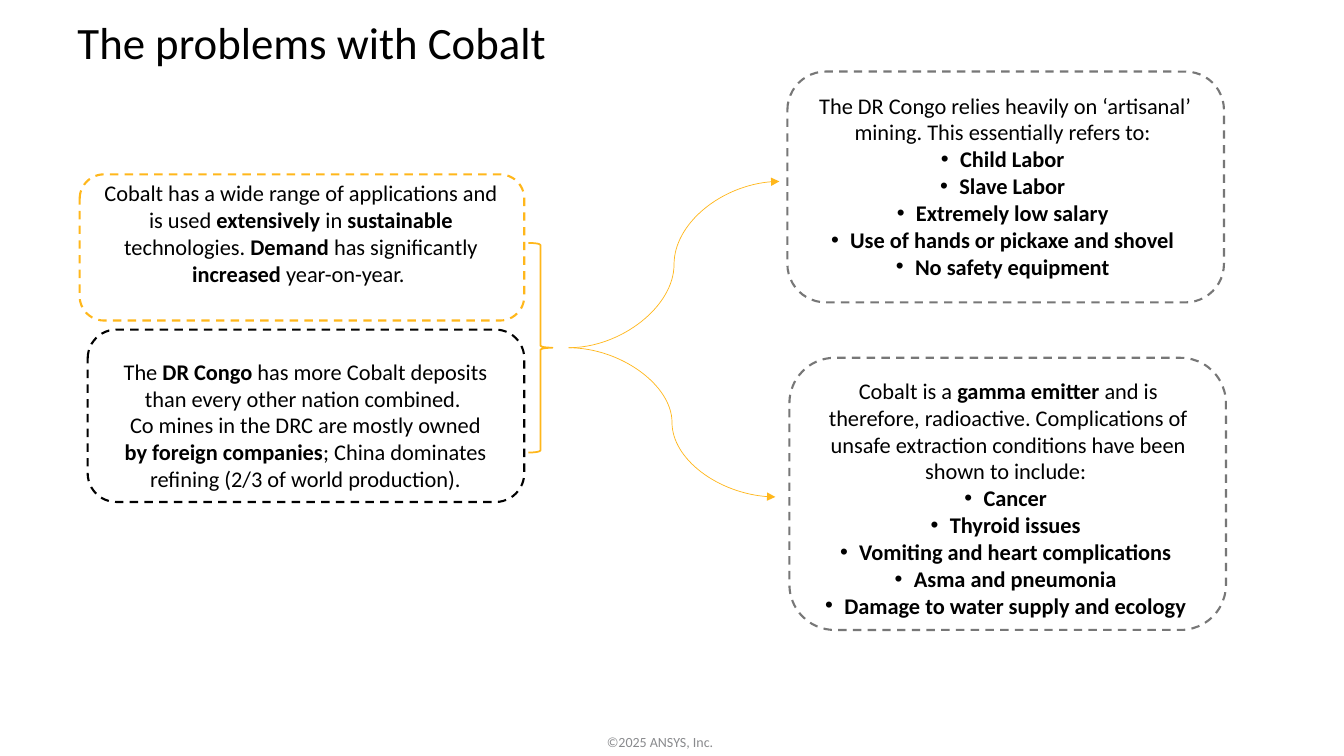
from lxml import etree
from pptx import Presentation
from pptx.dml.color import RGBColor
from pptx.enum import dml, shapes, text
from pptx.oxml import ns
from pptx.util import Inches, Pt

BLACK, WHITE, GREY, AMBER = "000000", "FFFFFF", "777777", "FFB71B"


def color(value):
    return RGBColor.from_string(value)


def write(paragraph, content, size=16, ink=BLACK, font="Calibri", align=None, bullet=False, spacing=None):
    if bullet:
        props = paragraph._p.get_or_add_pPr()
        props.set("marL", str(Inches(0.19)))
        props.set("indent", str(-Inches(0.19)))
        etree.SubElement(props, ns.qn("a:buFont")).set("typeface", "Arial")
        etree.SubElement(props, ns.qn("a:buChar")).set("char", "•")
    paragraph.alignment = align
    paragraph.line_spacing = spacing
    for index, part in enumerate(content.split("**")):
        if part:
            run = paragraph.add_run()
            run.text = part
            run.font.name = font
            run.font.size = Pt(size)
            run.font.bold = index % 2 == 1
            run.font.color.rgb = color(ink)


class CobaltSlide:
    def __init__(self, deck):
        self.shapes = deck.slides.add_slide(deck.slide_layouts[6]).shapes

    def label(self, place, paragraphs, bullets=(), **style):
        frame = self.shapes.add_textbox(*map(Inches, place)).text_frame
        frame.word_wrap = True
        frame.vertical_anchor = text.MSO_ANCHOR.TOP
        lines = [(line, False) for line in paragraphs]
        lines += [(f"**{item} **", True) for item in bullets]
        for index, (line, bullet) in enumerate(lines):
            paragraph = frame.add_paragraph() if index else frame.paragraphs[0]
            write(paragraph, line, bullet=bullet, **style)

    def outline(self, kind, place, ink, width):
        figure = self.shapes.add_shape(kind, *map(Inches, place))
        figure.shadow.inherit = False
        figure.fill.background()
        figure.line.color.rgb = color(ink)
        figure.line.width = Pt(width)
        return figure

    def card(self, frame_place, text_place, ink, paragraphs, bullets=()):
        frame = self.outline(shapes.MSO_SHAPE.ROUNDED_RECTANGLE, frame_place, ink, 1.5)
        frame.fill.solid()
        frame.fill.fore_color.rgb = color(WHITE)
        frame.line.dash_style = dml.MSO_LINE.DASH
        self.label(text_place, paragraphs, bullets, align=text.PP_ALIGN.CENTER)

    def brace(self, place):
        self.outline(shapes.MSO_SHAPE.RIGHT_BRACE, place, AMBER, 1.25)

    def arrow(self, start, end):
        curve = self.shapes.add_connector(shapes.MSO_CONNECTOR.CURVE, *map(Inches, start + end))
        curve.line.color.rgb = color(AMBER)
        curve.line.width = Pt(0.5)
        props = curve._element.spPr
        etree.SubElement(props.find(ns.qn("a:ln")), ns.qn("a:tailEnd")).set("type", "triangle")
        etree.SubElement(props, ns.qn("a:effectLst"))


def main():
    deck = Presentation()
    deck.slide_width, deck.slide_height = Inches(13.33), Inches(7.5)
    slide = CobaltSlide(deck)

    slide.label((5.92, 7.23, 1.5, 0.27), ["©2025 ANSYS, Inc."], size=10, ink="898A8D")
    slide.label((0.67, 0.16, 12, 0.93), ["The problems with Cobalt"], size=32, spacing=0.9)

    slide.card(
        (0.87, 3.27, 4.33, 1.71), (1.06, 3.5, 3.94, 1.45), BLACK,
        ["The **DR Congo **has more Cobalt deposits than every other nation combined. ",
         "Co mines in the DRC are mostly owned **by foreign companies**; "
         "China dominates refining (2/3 of world production)."],
    )
    slide.card(
        (7.81, 0.71, 4.33, 2.29), (8, 0.86, 3.94, 1.99), GREY,
        ["The DR Congo relies heavily on ‘artisanal’ mining. This essentially refers to: "],
        ["Child Labor", "Slave Labor", "Extremely low salary",
         "Use of hands or pickaxe and shovel", "No safety equipment"],
    )
    slide.card(
        (7.83, 3.55, 4.33, 2.7), (8.03, 3.69, 3.94, 2.73), GREY,
        ["Cobalt is a **gamma emitter **and is therefore, radioactive. Complications of "
         "unsafe extraction conditions have been shown to include: "],
        ["Cancer", "Thyroid issues", "Vomiting and heart complications",
         "Asma and pneumonia", "Damage to water supply and ecology"],
    )
    slide.card(
        (0.79, 1.73, 4.41, 1.45), (0.92, 1.73, 4.13, 1.18), AMBER,
        ["Cobalt has a wide range of applications and is used **extensively** in "
         "**sustainable** technologies. **Demand** has significantly **increased** year-on-year. "],
    )

    slide.brace((5.24, 2.41, 0.24, 2.08))
    junction = (5.64, 3.45)
    for target in ((7.73, 1.8), (7.69, 4.93)):
        slide.arrow(junction, target)

    deck.save("out.pptx")


if __name__ == "__main__":
    main()
